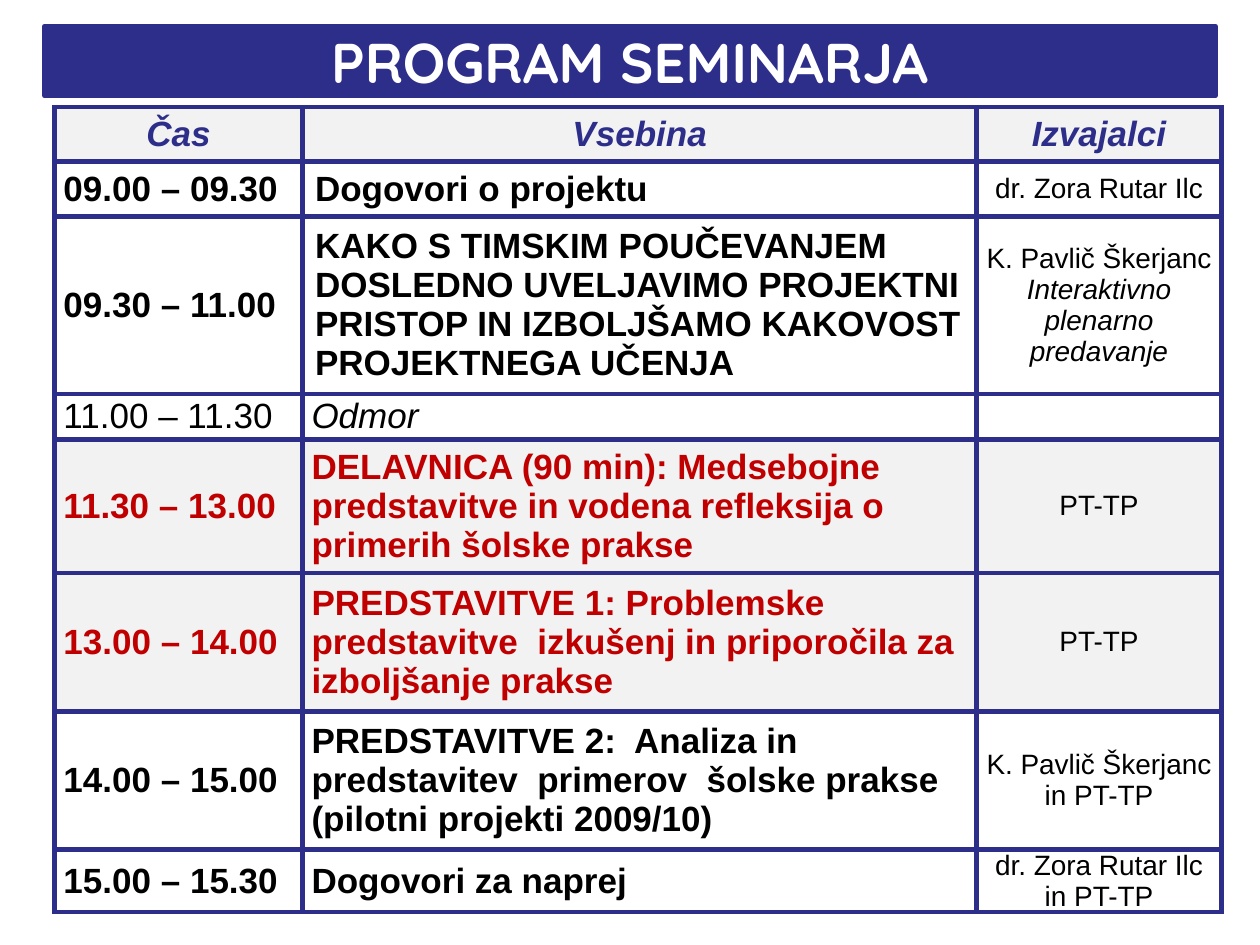
"""Builds the seminar programme slide: a title banner above a timetable."""
import pptx
import pptx.dml.color
import pptx.enum.shapes
import pptx.enum.text
import pptx.oxml
import pptx.oxml.ns
import pptx.util

Cm = pptx.util.Cm
Pt = pptx.util.Pt
RGBColor = pptx.dml.color.RGBColor
ALIGN = pptx.enum.text.PP_ALIGN
MIDDLE = pptx.enum.text.MSO_ANCHOR.MIDDLE

NAVY = RGBColor(0x2D, 0x2D, 0x8A)
RED = RGBColor(0xC0, 0x00, 0x00)
BLACK = RGBColor(0x00, 0x00, 0x00)
WHITE = RGBColor(0xFF, 0xFF, 0xFF)
GREY = RGBColor(0xF2, 0xF2, 0xF2)

TITLE = {"name": "Quicksand", "size": Pt(32), "bold": True, "color": WHITE}
BODY = {"name": "Arial", "size": Pt(20), "bold": True, "italic": False, "color": BLACK}
HEADER = {**BODY, "italic": True, "color": NAVY}
WORKSHOP = {**BODY, "color": RED}
BREAK = {**BODY, "bold": False}
SPEAKER = {**BODY, "size": Pt(16), "bold": False}
ITALIC = {"italic": True}

COL_WIDTHS = [5, 13.59, 4.93]
HEADER_HEIGHT = 1.1
NARROW, WIDE = 0.18, 0.25

HEADINGS = ["Čas", "Vsebina", "Izvajalci"]
SESSIONS = [
    (1.1, "09.00 – 09.30", "Dogovori o projektu",
     [("dr. Zora Rutar Ilc", {})], BODY, WHITE, WIDE, {}),
    (3.58, "09.30 – 11.00",
     "KAKO S TIMSKIM POUČEVANJEM DOSLEDNO UVELJAVIMO PROJEKTNI PRISTOP "
     "IN IZBOLJŠAMO KAKOVOST PROJEKTNEGA UČENJA",
     [("K. Pavlič Škerjanc", {}), ("Interaktivno", ITALIC), ("plenarno predavanje", ITALIC)],
     BODY, WHITE, WIDE, {}),
    (0.92, "11.00 – 11.30", "Odmor", [], BREAK, WHITE, NARROW, ITALIC),
    (2.69, "11.30 – 13.00",
     "DELAVNICA (90 min): Medsebojne predstavitve in vodena refleksija o primerih šolske prakse",
     [("PT-TP", {})], WORKSHOP, GREY, NARROW, {}),
    (2.79, "13.00 – 14.00",
     "PREDSTAVITVE 1: Problemske predstavitve  izkušenj in priporočila za izboljšanje prakse",
     [("PT-TP", {})], WORKSHOP, GREY, NARROW, {}),
    (2.79, "14.00 – 15.00",
     "PREDSTAVITVE 2:  Analiza in predstavitev  primerov  šolske prakse (pilotni projekti 2009/10)",
     [("K. Pavlič Škerjanc", {}), ("in PT-TP", {})], BODY, WHITE, NARROW, {}),
    (1.2, "15.00 – 15.30", "Dogovori za naprej",
     [("dr. Zora Rutar Ilc in PT-TP", {})], BODY, WHITE, NARROW, {}),
]


class SlideBuilder:
    def __init__(self, s):
        self.s = s
        self.line_color = NAVY
        self.line_width = Pt(3)

    def text(self, tf, lines, align):
        for i, (content, fmt) in enumerate(lines):
            p = tf.add_paragraph() if i else tf.paragraphs[0]
            p.alignment = align
            r = p.add_run()
            r.text = content
            for key, value in fmt.items():
                if key == "color":
                    r.font.color.rgb = value
                else:
                    setattr(r.font, key, value)

    def banner(self, left, top, width, height, title):
        sp = self.s.shapes.add_shape(
            pptx.enum.shapes.MSO_SHAPE.RECTANGLE, Cm(left), Cm(top), Cm(width), Cm(height))
        sp.shadow.inherit = False
        sp.fill.solid()
        sp.fill.fore_color.rgb = self.line_color
        sp.line.color.rgb = self.line_color
        sp.line.width = self.line_width
        sp.text_frame.vertical_anchor = MIDDLE
        self.text(sp.text_frame, [(title, TITLE)], ALIGN.CENTER)

    def borders(self, cell):
        tc_pr = cell._tc.get_or_add_tcPr()
        for side in ("lnL", "lnR", "lnT", "lnB"):
            tc_pr.append(pptx.oxml.parse_xml(
                f'<a:{side} {pptx.oxml.ns.nsdecls("a")} w="{self.line_width}">'
                f'<a:solidFill><a:srgbClr val="{self.line_color}"/></a:solidFill></a:{side}>'))

    def cell(self, cell, lines, align, fill, margin=NARROW):
        self.borders(cell)
        cell.fill.solid()
        cell.fill.fore_color.rgb = fill
        cell.vertical_anchor = MIDDLE
        cell.margin_left = cell.margin_right = Cm(margin)
        cell.margin_top = cell.margin_bottom = 0
        self.text(cell.text_frame, lines, align)

    def timetable(self, left, top):
        heights = [HEADER_HEIGHT] + [session[0] for session in SESSIONS]
        table = self.s.shapes.add_table(
            len(heights), len(COL_WIDTHS), Cm(left), Cm(top),
            Cm(sum(COL_WIDTHS)), Cm(sum(heights))).table
        table.first_row = table.horz_banding = False
        for col, width in zip(table.columns, COL_WIDTHS):
            col.width = Cm(width)
        for row, height in zip(table.rows, heights):
            row.height = Cm(height)
        for c, heading in enumerate(HEADINGS):
            self.cell(table.cell(0, c), [(heading, HEADER)], ALIGN.CENTER, GREY)
        for i, session in enumerate(SESSIONS, 1):
            _, time, content, speakers, fmt, fill, margin, extra = session
            people = [(name, {**SPEAKER, **style}) for name, style in speakers]
            self.cell(table.cell(i, 0), [(time, fmt)], ALIGN.LEFT, fill)
            self.cell(table.cell(i, 1), [(content, {**fmt, **extra})], ALIGN.LEFT, fill, margin)
            self.cell(table.cell(i, 2), people, ALIGN.CENTER, fill)


def main():
    prs = pptx.Presentation()
    prs.slide_width, prs.slide_height = Cm(25.4), Cm(19.05)
    builder = SlideBuilder(prs.slides.add_slide(prs.slide_layouts[6]))
    builder.banner(0.9, 0.53, 23.6, 1.4, "PROGRAM SEMINARJA")
    builder.timetable(1.1, 2.16)
    prs.save("out.pptx")


if __name__ == "__main__":
    main()
